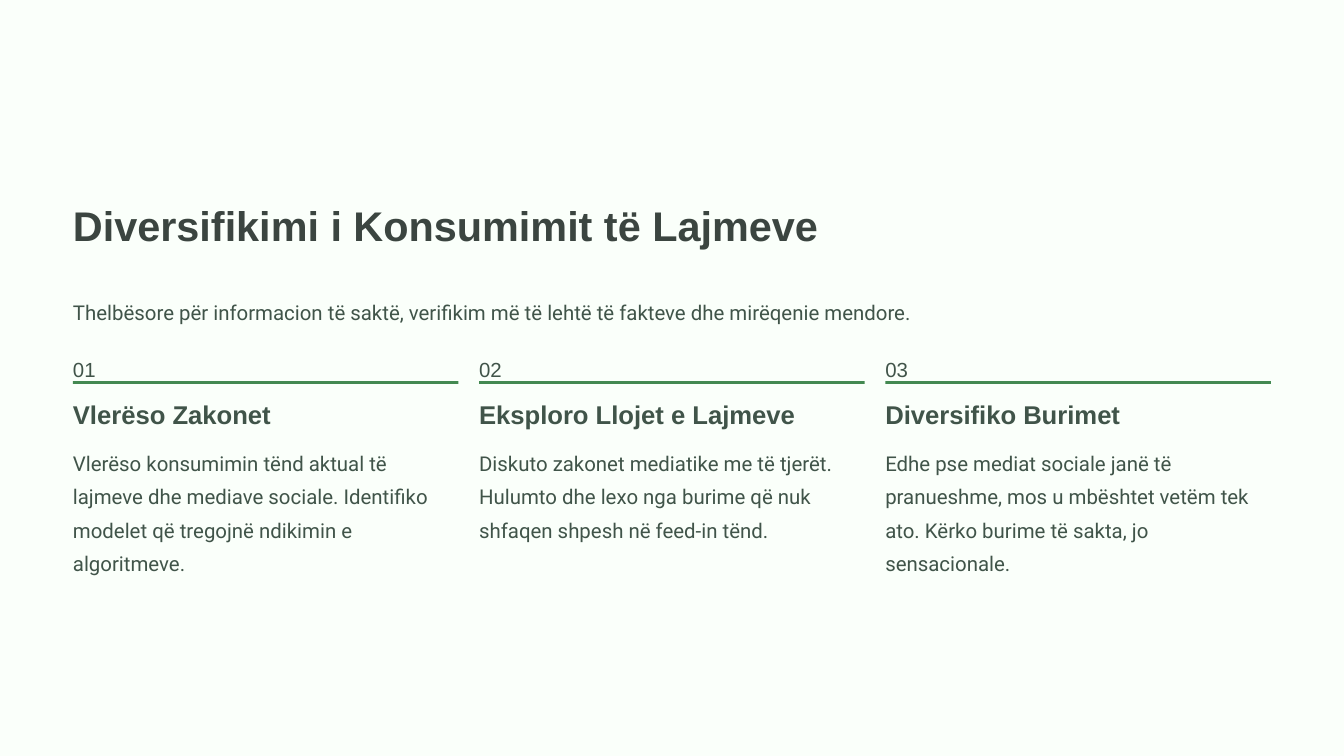
import pptx
import pptx.dml.color
import pptx.enum.shapes
import pptx.enum.text
import pptx.util

Pt = pptx.util.Pt

SLIDE_WIDTH = 1152
SLIDE_HEIGHT = 648

PAPER = "FAFFFA"
TITLE_INK = "3B4540"
INK = "405449"
GREEN = "438951"

LEFT = 62.5
CONTENT_WIDTH = 1026.8
COLUMN_WIDTH = 330.5
COLUMN_PITCH = (CONTENT_WIDTH - COLUMN_WIDTH) / 2

STEPS = [
    ("Vlerëso Zakonet",
     "Vlerëso konsumimin tënd aktual të lajmeve dhe mediave sociale. "
     "Identifiko modelet që tregojnë ndikimin e algoritmeve."),
    ("Eksploro Llojet e Lajmeve",
     "Diskuto zakonet mediatike me të tjerët. Hulumto dhe lexo nga burime "
     "që nuk shfaqen shpesh në feed-in tënd."),
    ("Diversifiko Burimet",
     "Edhe pse mediat sociale janë të pranueshme, mos u mbështet vetëm tek "
     "ato. Kërko burime të sakta, jo sensacionale."),
]


def to_color(hex_code):
    return pptx.dml.color.RGBColor.from_string(hex_code)


def add_text(slide, text, left, top, width, height, size=17.5, font="Roboto",
             color=INK, bold=False, spacing=28.5):
    frame = slide.shapes.add_textbox(
        Pt(left), Pt(top), Pt(width), Pt(height)).text_frame
    frame.margin_left = frame.margin_right = 0
    frame.margin_top = frame.margin_bottom = 0
    frame.vertical_anchor = pptx.enum.text.MSO_ANCHOR.TOP
    frame.word_wrap = True
    frame.text = text
    paragraph = frame.paragraphs[0]
    paragraph.alignment = pptx.enum.text.PP_ALIGN.LEFT
    paragraph.line_spacing = Pt(spacing)
    run_font = paragraph.runs[0].font
    run_font.name = font
    run_font.size = Pt(size)
    run_font.bold = bold
    run_font.color.rgb = to_color(color)


def add_rectangle(slide, left, top, width, height, color):
    shape = slide.shapes.add_shape(
        pptx.enum.shapes.MSO_SHAPE.RECTANGLE,
        Pt(left), Pt(top), Pt(width), Pt(height))
    shape.shadow.inherit = False
    shape.fill.solid()
    shape.fill.fore_color.rgb = to_color(color)
    shape.line.fill.background()


def add_step(slide, number, heading, body):
    left = LEFT + (number - 1) * COLUMN_PITCH
    add_text(slide, f"{number:02d}", left, 298.8, 24, 22.3, font="Arial")
    add_rectangle(slide, left, 326.7, COLUMN_WIDTH, 2.3, GREEN)
    add_text(slide, heading, left, 340.6, COLUMN_WIDTH, 28, size=22,
             font="Arial", bold=True, spacing=27.5)
    add_text(slide, body, left, 379.2, COLUMN_WIDTH, 85.7)


def main():
    presentation = pptx.Presentation()
    presentation.slide_width = Pt(SLIDE_WIDTH)
    presentation.slide_height = Pt(SLIDE_HEIGHT)
    slide = presentation.slides.add_slide(presentation.slide_layouts[6])

    # Tinted page
    add_rectangle(slide, 0, 0, SLIDE_WIDTH, SLIDE_HEIGHT, PAPER)

    # Title and introduction
    add_text(slide, "Diversifikimi i Konsumimit të Lajmeve",
             LEFT, 170, 660, 44.6, size=35.5, font="Arial",
             color=TITLE_INK, bold=True, spacing=44.5)
    add_text(slide, "Thelbësore për informacion të saktë, verifikim më të "
             "lehtë të fakteve dhe mirëqenie mendore.",
             LEFT, 249.8, CONTENT_WIDTH, 28.8)

    # Three numbered columns
    for number, (heading, body) in enumerate(STEPS, start=1):
        add_step(slide, number, heading, body)

    presentation.save("out.pptx")


if __name__ == "__main__":
    main()
